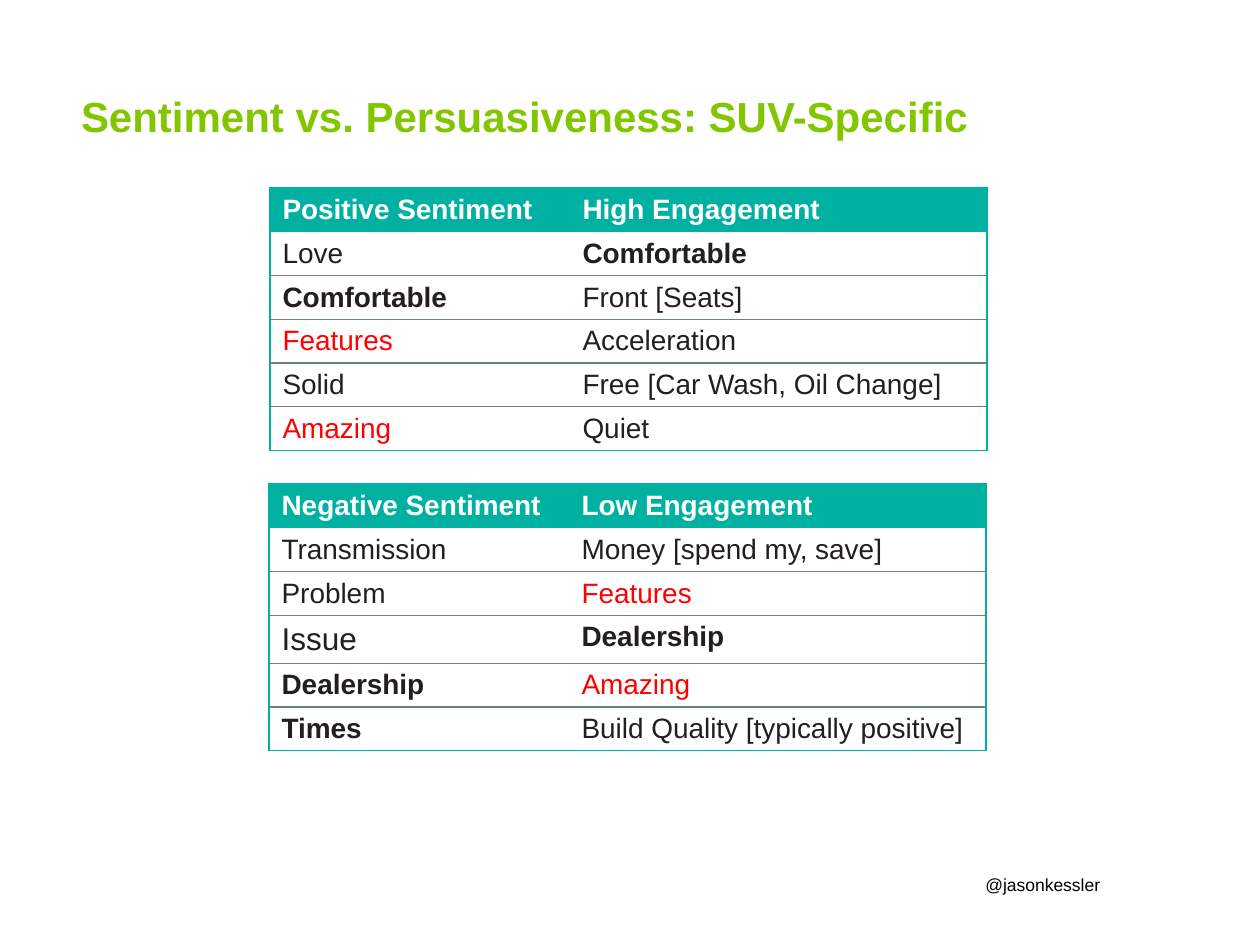
import lxml.etree
import pptx
import pptx.dml.color
import pptx.enum.text
import pptx.oxml.ns
import pptx.util

COLORS = {
    "title": "82C600",
    "teal": "00B1A1",
    "rule": "6D7F7E",
    "ink": "231F20",
    "shared": "FF0000",
    "white": "FFFFFF",
    "black": "000000",
}
FONT = "Arial"
EMU_PER_PX = 914400 / 126
COLUMN_WIDTHS = (300, 417)
ROW_HEIGHT = 42
RED_WORDS = {"Features", "Amazing"}
BOLD_WORDS = {"Comfortable", "Dealership", "Times"}
LARGE_WORDS = {"Issue"}

POSITIVE_ROWS = [
    ("Positive Sentiment", "High Engagement"),
    ("Love", "Comfortable"),
    ("Comfortable", "Front [Seats]"),
    ("Features", "Acceleration"),
    ("Solid", "Free [Car Wash, Oil Change]"),
    ("Amazing", "Quiet"),
]
NEGATIVE_ROWS = [
    ("Negative Sentiment", "Low Engagement"),
    ("Transmission", "Money [spend my, save]"),
    ("Problem", "Features"),
    ("Issue", "Dealership"),
    ("Dealership", "Amazing"),
    ("Times", "Build Quality [typically positive]"),
]


def px(length):
    return pptx.util.Emu(round(length * EMU_PER_PX))


def rgb(name):
    return pptx.dml.color.RGBColor.from_string(COLORS[name])


class SlideBuilder:
    """Adds consistently styled elements to one slide."""

    def __init__(self, presentation):
        self.slide = presentation.slides.add_slide(presentation.slide_layouts[5])

    def format_text(self, text_frame, size, color, bold=False, align="LEFT"):
        for paragraph in text_frame.paragraphs:
            paragraph.alignment = getattr(pptx.enum.text.PP_ALIGN, align)
            for run in paragraph.runs:
                run.font.name = FONT
                run.font.size = pptx.util.Pt(size)
                run.font.bold = bold
                run.font.color.rgb = rgb(color)

    def fill_frame(self, shape, text, anchor):
        text_frame = shape.text_frame
        text_frame.text = text
        text_frame.word_wrap = True
        text_frame.auto_size = pptx.enum.text.MSO_AUTO_SIZE.NONE
        text_frame.vertical_anchor = getattr(pptx.enum.text.MSO_ANCHOR, anchor)
        for side in ("left", "right", "top", "bottom"):
            setattr(text_frame, f"margin_{side}", 0)
        return text_frame

    def title(self, text, left, top, width, height):
        shape = self.slide.shapes.title
        shape.left, shape.top = px(left), px(top)
        shape.width, shape.height = px(width), px(height)
        text_frame = self.fill_frame(shape, text, "BOTTOM")
        self.format_text(text_frame, 24, "title", bold=True)

    def footer(self, text, left, top, width, height):
        shape = self.slide.shapes.add_textbox(px(left), px(top), px(width), px(height))
        text_frame = self.fill_frame(shape, text, "MIDDLE")
        self.format_text(text_frame, 10, "black", align="RIGHT")

    def border(self, cell, side, color):
        properties = cell._tc.get_or_add_tcPr()
        tag = pptx.oxml.ns.qn(f"a:ln{side}")
        line = lxml.etree.SubElement(properties, tag, w=str(pptx.util.Pt(0.75)))
        if color is None:
            lxml.etree.SubElement(line, pptx.oxml.ns.qn("a:noFill"))
        else:
            fill = lxml.etree.SubElement(line, pptx.oxml.ns.qn("a:solidFill"))
            lxml.etree.SubElement(fill, pptx.oxml.ns.qn("a:srgbClr"), val=COLORS[color])

    def table(self, rows, left, top):
        last_row, last_column = len(rows) - 1, len(COLUMN_WIDTHS) - 1
        frame = self.slide.shapes.add_table(
            len(rows), len(COLUMN_WIDTHS), px(left), px(top),
            px(sum(COLUMN_WIDTHS)), px(ROW_HEIGHT * len(rows)))
        table = frame.table
        table.horz_banding = False
        for column, width in zip(table.columns, COLUMN_WIDTHS):
            column.width = px(width)
        for row_index, words in enumerate(rows):
            table.rows[row_index].height = px(ROW_HEIGHT)
            header = row_index == 0
            for column_index, word in enumerate(words):
                cell = table.cell(row_index, column_index)
                self.border(cell, "L", "teal" if column_index == 0 else None)
                self.border(cell, "R", "teal" if column_index == last_column else None)
                self.border(cell, "T", "teal" if row_index <= 1 else "rule")
                self.border(cell, "B", "teal" if row_index in (0, last_row) else "rule")
                cell.fill.solid()
                cell.fill.fore_color.rgb = rgb("teal" if header else "white")
                cell.text_frame.text = word
                body_color = "shared" if word in RED_WORDS else "ink"
                self.format_text(
                    cell.text_frame,
                    18 if word in LARGE_WORDS else 16,
                    "white" if header else body_color,
                    bold=header or word in BOLD_WORDS)


def main():
    presentation = pptx.Presentation()
    presentation.slide_width = pptx.util.Inches(10)
    presentation.slide_height = pptx.util.Inches(7.5)
    builder = SlideBuilder(presentation)
    builder.footer("@jasonkessler", 479, 873, 621, 22)
    builder.table(POSITIVE_ROWS, 270, 188)
    builder.title("Sentiment vs. Persuasiveness: SUV-Specific", 81, 39, 1096, 102)
    builder.table(NEGATIVE_ROWS, 269, 484)
    presentation.save("out.pptx")


if __name__ == "__main__":
    main()
